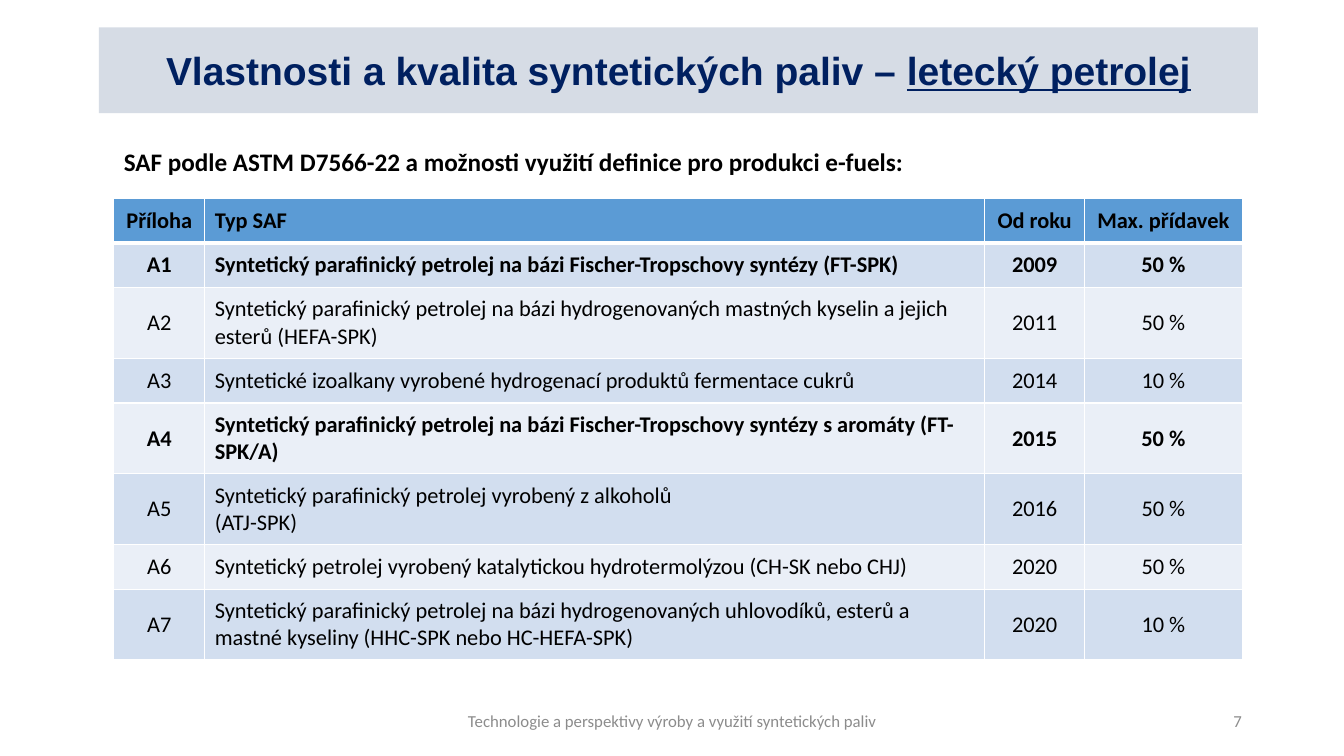
from lxml.etree import SubElement
from pptx import Presentation
from pptx.dml.color import RGBColor
from pptx.enum.shapes import MSO_SHAPE as Shape
from pptx.enum.text import MSO_ANCHOR as Anchor, PP_ALIGN as Align
from pptx.oxml.ns import qn
from pptx.util import Cm, Pt

COLORS = {
    "banner": "D6DCE5", "title": "002060", "text": "000000", "footer": "8C8C8C",
    "header": "5B9BD5", "odd": "D2DEEF", "even": "EAEFF7", "border": "FFFFFF",
}
COLUMN_WIDTHS = (2.29, 19.66, 2.51, 3.98)
LOW_ROW, TALL_ROW = 1.13, 1.78
BOLD_ROWS = ("Příloha", "A1", "A4")
TALL_ROWS = ("A2", "A4", "A5", "A7")
ROWS = (
    ("Příloha", "Typ SAF", "Od roku", "Max. přídavek"),
    ("A1", "Syntetický parafinický petrolej na bázi Fischer-Tropschovy syntézy (FT-SPK)",
     "2009", "50 %"),
    ("A2", "Syntetický parafinický petrolej na bázi hydrogenovaných mastných kyselin "
     "a jejich esterů (HEFA-SPK)", "2011", "50 %"),
    ("A3", "Syntetické izoalkany vyrobené hydrogenací produktů fermentace cukrů",
     "2014", "10 %"),
    ("A4", "Syntetický parafinický petrolej na bázi Fischer-Tropschovy syntézy "
     "s aromáty (FT-SPK/A)", "2015", "50 %"),
    ("A5", "Syntetický parafinický petrolej vyrobený z alkoholů\n(ATJ-SPK)",
     "2016", "50 %"),
    ("A6", "Syntetický petrolej vyrobený katalytickou hydrotermolýzou (CH-SK nebo CHJ)",
     "2020", "50 %"),
    ("A7", "Syntetický parafinický petrolej na bázi hydrogenovaných uhlovodíků, esterů "
     "a mastné kyseliny (HHC-SPK nebo HC-HEFA-SPK)", "2020", "10 %"),
)


def color(name):
    return RGBColor.from_string(COLORS[name])


def style(para, size, color_name, bold=False, align=Align.LEFT, name="Calibri"):
    para.alignment = align
    font = para.font
    font.name, font.size, font.bold = name, Pt(size), bold
    font.color.rgb = color(color_name)


def add_title(page, left, top, width, height):
    banner = page.shapes.add_shape(
        Shape.RECTANGLE, Cm(left), Cm(top), Cm(width), Cm(height))
    banner.shadow.inherit = False
    banner.fill.solid()
    banner.fill.fore_color.rgb = color("banner")
    banner.line.fill.background()
    banner.text_frame.vertical_anchor = Anchor.MIDDLE
    para = banner.text_frame.paragraphs[0]
    para.add_run().text = "Vlastnosti a kvalita syntetických paliv – "
    topic = para.add_run()
    topic.text = "letecký petrolej"
    topic.font.underline = True
    style(para, 27.9, "title", True, Align.CENTER, "Arial")


def add_label(page, left, top, width, height, text, size, color_name,
              bold=False, align=Align.LEFT, anchor=Anchor.MIDDLE, wrap=True):
    box = page.shapes.add_textbox(Cm(left), Cm(top), Cm(width), Cm(height))
    frame = box.text_frame
    frame.word_wrap = wrap
    frame.vertical_anchor = anchor
    para = frame.paragraphs[0]
    para.text = text
    style(para, size, color_name, bold, align)


def set_borders(cell, bottom):
    """Draw white cell edges; only the bottom one varies in width (points)."""
    props = cell._tc.get_or_add_tcPr()
    for index, (side, points) in enumerate(
            (("lnL", 1), ("lnR", 1), ("lnT", 1), ("lnB", bottom))):
        line = props.makeelement(qn(f"a:{side}"), {"w": str(Pt(points))})
        fill = SubElement(line, qn("a:solidFill"))
        SubElement(fill, qn("a:srgbClr"), val=COLORS["border"])
        props.insert(index, line)


def add_fuel_table(page, left, top):
    heights = [TALL_ROW if row[0] in TALL_ROWS else LOW_ROW for row in ROWS]
    table = page.shapes.add_table(
        len(ROWS), len(COLUMN_WIDTHS), Cm(left), Cm(top),
        Cm(sum(COLUMN_WIDTHS)), Cm(sum(heights))).table
    for column, width in zip(table.columns, COLUMN_WIDTHS):
        column.width = Cm(width)
    for r, (values, height) in enumerate(zip(ROWS, heights)):
        table.rows[r].height = Cm(height)
        fill_name = "header" if r == 0 else "odd" if r % 2 else "even"
        for c, value in enumerate(values):
            cell = table.cell(r, c)
            cell.vertical_anchor = Anchor.MIDDLE
            cell.fill.solid()
            cell.fill.fore_color.rgb = color(fill_name)
            set_borders(cell, bottom=3 if r == 0 else 1)
            para = cell.text_frame.paragraphs[0]
            para.text = value
            style(para, 16, "text", values[0] in BOLD_ROWS,
                  Align.LEFT if c == 1 else Align.CENTER)


def add_footer(page, top, height):
    add_label(page, 11.23, top, 11.43, height,
              "Technologie a perspektivy výroby a využití syntetických paliv",
              12, "footer", align=Align.CENTER)
    add_label(page, 23.93, top, 7.62, height, "7", 12, "footer", align=Align.RIGHT)


def main():
    deck = Presentation()
    deck.slide_width, deck.slide_height = Cm(33.87), Cm(19.05)
    page = deck.slides.add_slide(deck.slide_layouts[6])
    add_title(page, 2.49, 0.69, 29.21, 2.16)
    add_footer(page, 17.66, 1.01)
    add_label(page, 2.87, 3.56, 20.35, 1.8,
              "SAF podle ASTM D7566-22 a možnosti využití definice pro produkci e-fuels:",
              18, "text", bold=True, anchor=Anchor.TOP, wrap=False)
    add_fuel_table(page, 2.87, 4.99)
    deck.save("out.pptx")


if __name__ == "__main__":
    main()
